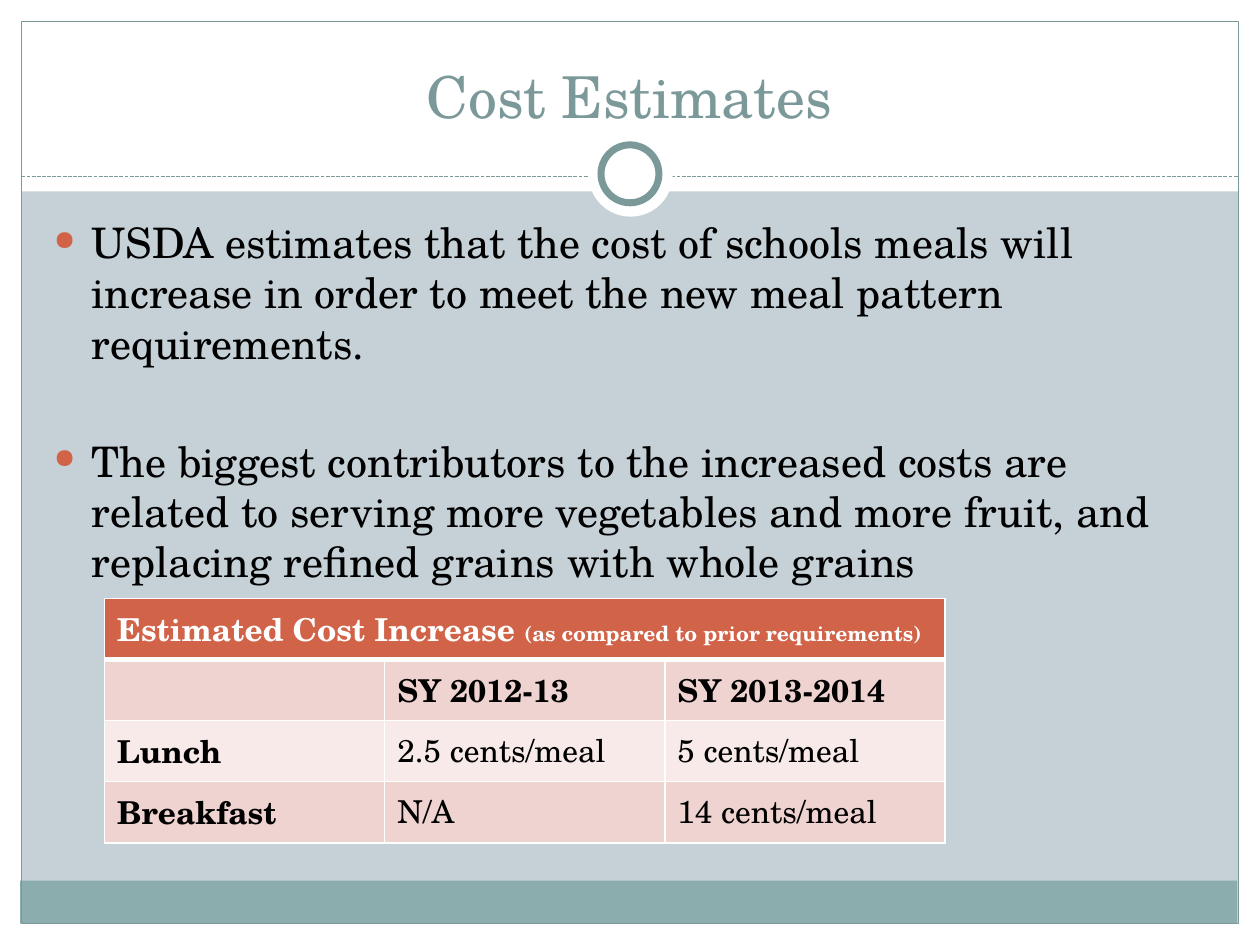
"""Build the cost estimates slide with its bullets and meal cost table."""
import dataclasses
import typing

import lxml.etree
import pptx
import pptx.dml.color
import pptx.enum.dml
import pptx.enum.shapes
import pptx.enum.text
import pptx.oxml
import pptx.oxml.ns
import pptx.util

Inches = pptx.util.Inches
Pt = pptx.util.Pt
RGBColor = pptx.dml.color.RGBColor
Kind = pptx.enum.shapes.MSO_SHAPE
qn = pptx.oxml.ns.qn

WHITE = RGBColor(0xFF, 0xFF, 0xFF)
BLACK = RGBColor(0, 0, 0)
MIST = RGBColor(0xC5, 0xD1, 0xD7)
SAGE = RGBColor(0x8C, 0xAD, 0xAE)
TEAL = RGBColor(0x7C, 0x99, 0x9A)
RUST = RGBColor(0xD1, 0x63, 0x49)
ROSE = RGBColor(0xEE, 0xD3, 0xD0)
BLUSH = RGBColor(0xF7, 0xEA, 0xE9)
FONT = "TeX Gyre Schola"


@dataclasses.dataclass
class Panel:
    """A plain shape of the frame."""
    left: float
    top: float
    width: float
    height: float
    fill: typing.Optional[RGBColor] = WHITE
    line: float = 0
    kind: Kind = Kind.RECTANGLE


BACK = [
    Panel(0, 7.33, 10, 0.17),
    Panel(0, 0, 10, 1.52),
    Panel(0, 0, 0.17, 7.5),
    Panel(9.83, 0, 0.17, 7.5),
    Panel(0.16, 6.99, 9.66, 0.34, SAGE),
    Panel(0.17, 0.17, 9.66, 7.16, None, 0.75),
]
RINGS = [
    Panel(4.67, 1.05, 0.67, 0.67, kind=Kind.OVAL),
    Panel(4.77, 1.15, 0.46, 0.46, WHITE, 4, Kind.OVAL),
]
POINTS = [
    ("USDA estimates that the cost of schools meals will increase "
     "in order to meet the new meal pattern requirements.", 4.8),
    ("The biggest contributors to the increased costs are related to "
     "serving more vegetables and more fruit, and replacing refined "
     "grains with whole grains", 38.4),
]
HEAD = [("Estimated Cost Increase ", 18),
        ("(as compared to prior requirements)", 12)]
ROWS = [
    ["", "SY 2012-13", "SY 2013-2014"],
    ["Lunch", "2.5 cents/meal", "5 cents/meal"],
    ["Breakfast", "N/A", "14 cents/meal"],
]


def put(item: typing.Any, style: dict) -> None:
    """Set each named value on the item."""
    for name, value in style.items():
        setattr(item, name, value)


def write(par, text: str, size: float, color: RGBColor, bold: bool = False) -> None:
    """Add a run in the slide's font."""
    run = par.add_run()
    run.text = text
    put(run.font, {"name": FONT, "size": Pt(size), "bold": bold})
    run.font.color.rgb = color


def draw(slide, panel: Panel) -> None:
    """Draw one panel."""
    box = [Inches(n) for n in (panel.left, panel.top, panel.width, panel.height)]
    shape = slide.shapes.add_shape(panel.kind, *box)
    shape.shadow.inherit = False
    if panel.fill is None:
        shape.fill.background()
    else:
        shape.fill.solid()
        shape.fill.fore_color.rgb = panel.fill
    if panel.line:
        shape.line.color.rgb = TEAL
        shape.line.width = Pt(panel.line)
    else:
        shape.line.fill.background()


def rule(slide) -> None:
    """Draw the dashed line under the title."""
    line = slide.shapes.add_connector(
        pptx.enum.shapes.MSO_CONNECTOR.STRAIGHT,
        Inches(0.17), Inches(1.4), Inches(9.83), Inches(1.4))
    line.line.color.rgb = TEAL
    put(line.line, {"width": Pt(0.75),
                    "dash_style": pptx.enum.dml.MSO_LINE.SQUARE_DOT})
    props = line.element.find(qn("p:spPr"))
    lxml.etree.SubElement(props, qn("a:effectLst"))


def head(slide) -> None:
    """Place the title in front of the panels."""
    title = slide.shapes.title
    put(title, {"left": Inches(0.33), "top": Inches(0.25),
                "width": Inches(9.33), "height": Inches(0.83)})
    put(title.text_frame, {
        "vertical_anchor": pptx.enum.text.MSO_ANCHOR.BOTTOM,
        "auto_size": pptx.enum.text.MSO_AUTO_SIZE.NONE, "word_wrap": True})
    par = title.text_frame.paragraphs[0]
    par.alignment = pptx.enum.text.PP_ALIGN.CENTER
    write(par, "Cost Estimates", 33, TEAL)
    title.element.getparent().append(title.element)


def dot(par) -> None:
    """Give the paragraph a round bullet and hanging indent."""
    props = par._p.get_or_add_pPr()
    props.set("marL", str(Inches(0.3)))
    props.set("indent", str(-Inches(0.3)))
    color = lxml.etree.SubElement(props, qn("a:buClr"))
    lxml.etree.SubElement(color, qn("a:srgbClr")).set("val", str(RUST))
    lxml.etree.SubElement(props, qn("a:buSzPct")).set("val", "65000")
    lxml.etree.SubElement(props, qn("a:buChar")).set("char", "●")


def body(slide) -> None:
    """Write the bullet points."""
    frame = slide.shapes.add_textbox(
        Inches(0.33), Inches(1.67), Inches(9.3), Inches(5)).text_frame
    frame.word_wrap = True
    for i, (text, gap) in enumerate(POINTS):
        par = frame.add_paragraph() if i else frame.paragraphs[0]
        par.space_before = Pt(gap)
        dot(par)
        write(par, text, 24, BLACK)


def paint(cell, fill: RGBColor, top: float, base: float) -> None:
    """Set the white borders and the fill of a cell."""
    props = cell._tc.get_or_add_tcPr()
    for side, width in (("L", 1), ("R", 1), ("T", top), ("B", base)):
        line = lxml.etree.SubElement(props, qn(f"a:ln{side}"))
        line.set("w", str(Pt(width)))
        solid = lxml.etree.SubElement(line, qn("a:solidFill"))
        lxml.etree.SubElement(solid, qn("a:srgbClr")).set("val", str(WHITE))
    cell.fill.solid()
    cell.fill.fore_color.rgb = fill
    cell.vertical_anchor = pptx.enum.text.MSO_ANCHOR.MIDDLE


def grid(slide) -> None:
    """Build the cost table."""
    table = slide.shapes.add_table(
        len(ROWS) + 1, 3, Inches(0.83), Inches(4.75),
        Inches(6.67), Inches(1.94)).table
    for cell in table.rows[0].cells:
        paint(cell, RUST, 1, 3)
    table.cell(0, 0).merge(table.cell(0, 2))
    for text, size in HEAD:
        write(table.cell(0, 0).text_frame.paragraphs[0], text, size, WHITE, True)
    for r, row in enumerate(ROWS, 1):
        for c, text in enumerate(row):
            cell = table.cell(r, c)
            paint(cell, ROSE if r % 2 else BLUSH, 3 if r == 1 else 1, 1)
            cell.vertical_anchor = pptx.enum.text.MSO_ANCHOR.TOP
            if text:
                write(cell.text_frame.paragraphs[0], text, 18, BLACK,
                      r == 1 or c == 0)
    table.cell(0, 0).vertical_anchor = pptx.enum.text.MSO_ANCHOR.TOP


def main() -> None:
    """Build and save the slide."""
    deck = pptx.Presentation()
    put(deck, {"slide_width": Inches(10), "slide_height": Inches(7.5)})
    slide = deck.slides.add_slide(deck.slide_layouts[5])
    slide.background.fill.solid()
    slide.background.fill.fore_color.rgb = MIST
    for panel in BACK:
        draw(slide, panel)
    rule(slide)
    for panel in RINGS:
        draw(slide, panel)
    head(slide)
    body(slide)
    grid(slide)
    deck.save("out.pptx")


if __name__ == "__main__":
    main()
